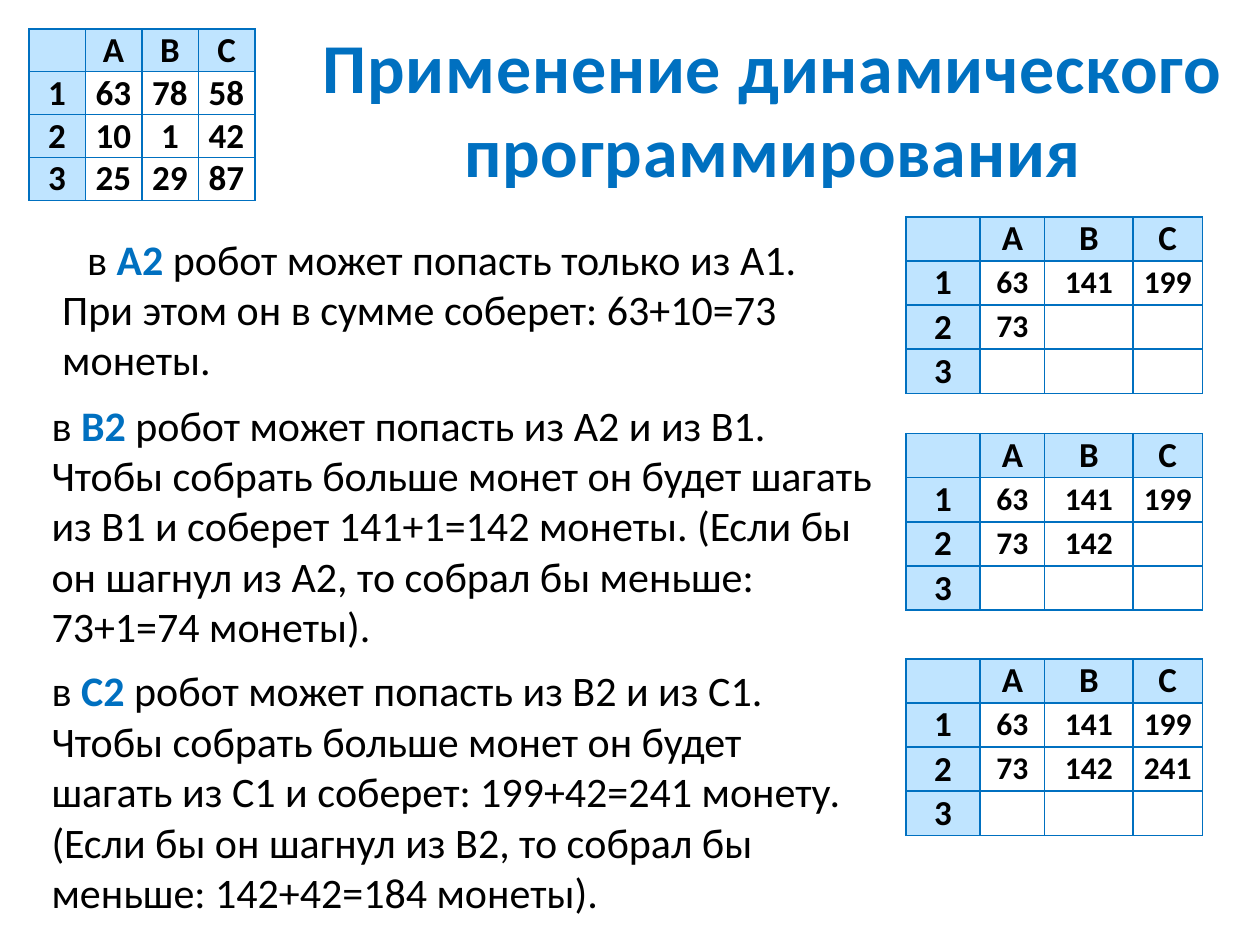
import dataclasses

import pptx
import pptx.dml.color
import pptx.enum.text
import pptx.oxml
import pptx.oxml.ns
import pptx.util

Cm = pptx.util.Cm
Pt = pptx.util.Pt


@dataclasses.dataclass
class Theme:
    font: str = "Calibri"
    ink: str = "000000"
    blue: str = "0070C0"
    pale: str = "BFE4FF"
    white: str = "FFFFFF"
    title: int = 40
    text: int = 24
    cell: int = 20
    small: int = 18


class Deck:
    """Holds the theme and the current slide."""

    def __init__(self, theme):
        self.theme = theme
        self.file = pptx.Presentation()
        self.file.slide_width, self.file.slide_height = Cm(25.4), Cm(19.05)
        self.slide = self.file.slides.add_slide(self.file.slide_layouts[1])

    def run(self, para, text, size, color, bold=False):
        run = para.add_run()
        run.text = text
        font = run.font
        font.name, font.size, font.bold = self.theme.font, Pt(size), bold
        font.color.rgb = pptx.dml.color.RGBColor.from_string(color)
        return run

    def place(self, shape, box, anchor):
        shape.left, shape.top, shape.width, shape.height = map(Cm, box)
        frame = shape.text_frame
        frame.word_wrap = True
        frame.auto_size = pptx.enum.text.MSO_AUTO_SIZE.NONE
        frame.vertical_anchor = anchor
        return frame.paragraphs[0]

    def title(self, text, box):
        para = self.place(self.slide.shapes.title, box,
                          pptx.enum.text.MSO_ANCHOR.MIDDLE)
        para.alignment = pptx.enum.text.PP_ALIGN.CENTER
        run = self.run(para, text, self.theme.title, self.theme.blue, True)
        run.font._element.set("spc", "50")

    def step(self, shape, box, goal, text):
        """Explain how the robot reaches the goal cell."""
        para = self.place(shape, box, pptx.enum.text.MSO_ANCHOR.TOP)
        theme = self.theme
        self.run(para, "в ", theme.text, theme.ink)
        self.run(para, goal + " ", theme.text, theme.blue, True)
        self.run(para, text, theme.text, theme.ink)
        return para

    def body(self, box, goal, text):
        para = self.step(self.slide.placeholders[1], box, goal, text)
        props = para._p.get_or_add_pPr()
        props.set("marL", "0")
        props.set("indent", str(Cm(0.5)))
        props.append(pptx.oxml.parse_xml(
            f'<a:buNone {pptx.oxml.ns.nsdecls("a")}/>'))

    def note(self, box, goal, text):
        shape = self.slide.shapes.add_textbox(*map(Cm, box))
        self.step(shape, box, goal, text)

    def edge(self, cell):
        props = cell._tc.get_or_add_tcPr()
        for i, side in enumerate(("lnL", "lnR", "lnT", "lnB")):
            props.insert(i, pptx.oxml.parse_xml(
                f'<a:{side} {pptx.oxml.ns.nsdecls("a")} w="12700">'
                f'<a:solidFill><a:srgbClr val="{self.theme.blue}"/>'
                f'</a:solidFill></a:{side}>'))

    def cell(self, cell, text, size, fill):
        cell.margin_left = cell.margin_right = Cm(0.18)
        cell.margin_top = cell.margin_bottom = 0
        cell.vertical_anchor = pptx.enum.text.MSO_ANCHOR.MIDDLE
        cell.fill.solid()
        cell.fill.fore_color.rgb = pptx.dml.color.RGBColor.from_string(fill)
        self.edge(cell)
        para = cell.text_frame.paragraphs[0]
        para.alignment = pptx.enum.text.PP_ALIGN.CENTER
        if text:
            self.run(para, text, size, self.theme.ink, True)
        else:
            para.font.size = Pt(self.theme.small)

    def grid(self, left, top, wides, high, rows, size):
        """Draw a table with column letters and row numbers as heads."""
        full = [["", "A", "B", "C"]]
        full += [[str(n), *row] for n, row in enumerate(rows, 1)]
        frame = self.slide.shapes.add_table(
            len(full), len(wides), Cm(left), Cm(top),
            Cm(sum(wides)), Cm(high * len(full)))
        table = frame.table
        for col, wide in zip(table.columns, wides):
            col.width = Cm(wide)
        for r, row in enumerate(full):
            table.rows[r].height = Cm(high)
            for c, text in enumerate(row):
                head = r == 0 or c == 0
                self.cell(table.cell(r, c), text,
                          self.theme.cell if head else size,
                          self.theme.pale if head else self.theme.white)


def main():
    theme = Theme()
    deck = Deck(theme)

    # Title
    deck.title("Применение динамического программирования",
               (5.77, 0.58, 19.63, 3.18))

    # Steps of the robot
    deck.body((1, 4.57, 16.87, 3.18), "A2",
              "робот может попасть только из А1. При этом он в сумме "
              "соберет: 63+10=73 монеты.")
    deck.note((0.79, 7.92, 17.27, 4.57), "B2",
              "робот может попасть из A2 и из B1. Чтобы собрать больше монет "
              "он будет шагать из B1 и соберет 141+1=142 монеты. (Если бы он "
              "шагнул из A2, то собрал бы меньше: 73+1=74 монеты).")
    deck.note((0.79, 13.28, 16.87, 5.16), "C2",
              "робот может попасть из B2 и из C1. Чтобы собрать больше монет "
              "он будет шагать из C1 и соберет: 199+42=241 монету. (Если бы "
              "он шагнул из B2, то собрал бы меньше: 142+42=184 монеты).")

    # Coins on the field
    coins = [["63", "78", "58"], ["10", "1", "42"], ["25", "29", "87"]]
    deck.grid(0.58, 0.58, [1.14] * 4, 0.84, coins, theme.cell)

    # Sums: each table fills one more cell of the second row
    first, second = ["63", "141", "199"], ["73", "142", "241"]
    for done, top in enumerate((4.37, 8.74, 13.28), 1):
        sums = [first, second[:done] + [""] * (3 - done), [""] * 3]
        deck.grid(18.26, top, [1.5, 1.3, 1.78, 1.4], 0.89, sums, theme.small)

    deck.file.save("out.pptx")


if __name__ == "__main__":
    main()
